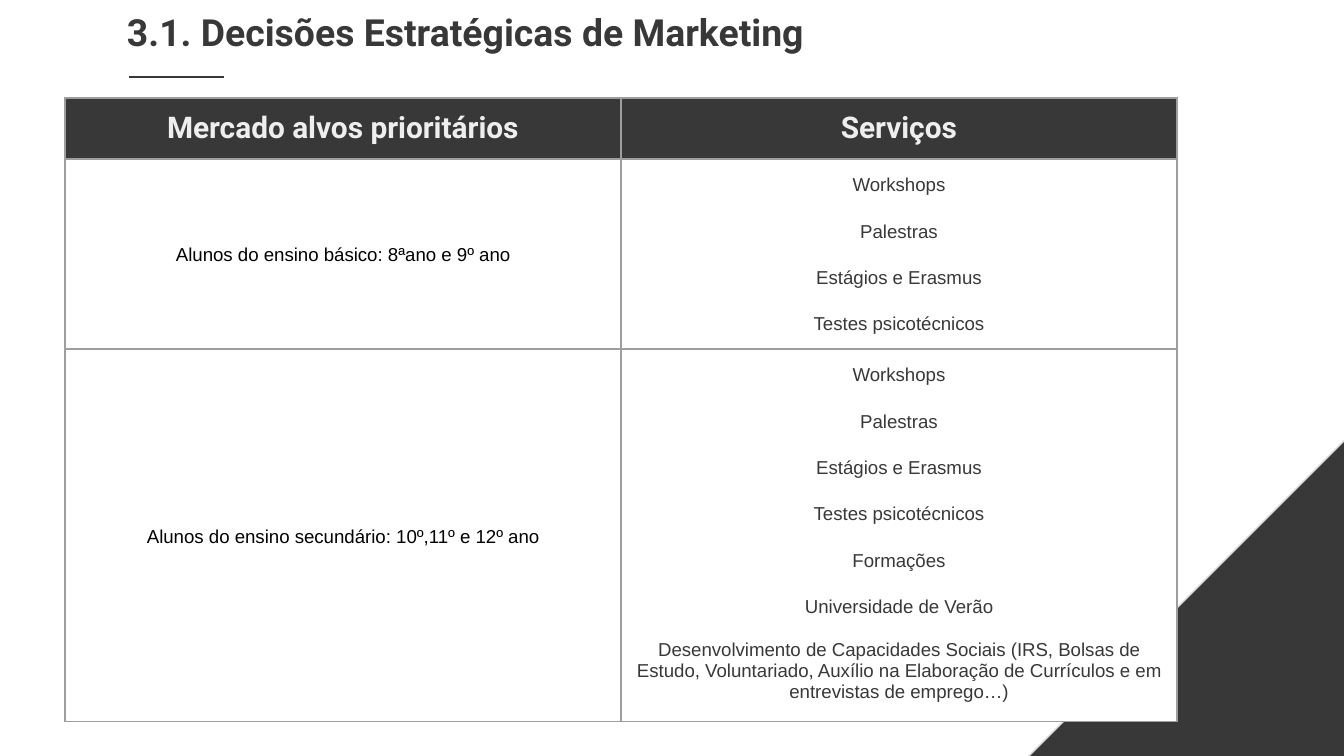
import pptx
import pptx.util
import pptx.dml.color
import pptx.enum.shapes
import pptx.enum.text
import pptx.oxml
import pptx.oxml.ns
from dataclasses import dataclass


@dataclass(frozen=True)
class Theme:
    dark: str = "383838"
    light: str = "EEEEEE"
    white: str = "FFFFFF"
    black: str = "000000"
    edge: str = "DBDBDB"
    border: str = "9E9E9E"
    heading_font: str = "Roboto"
    body_font: str = "Arial"
    title_size: int = 20
    header_size: int = 16
    body_size: int = 10
    spacing: int = 12
    leading: float = 1.15
    hairline: float = 0.75


THEME = Theme()
SCALE = 914400 / 134.4

TITLE = "3.1. Decisões Estratégicas de Marketing"
HEADERS = ["Mercado alvos prioritários", "Serviços"]
COMMON_SERVICES = ["Workshops", "Palestras", "Estágios e Erasmus", "Testes psicotécnicos"]
LONG_SERVICE = (
    "Desenvolvimento de Capacidades Sociais (IRS, Bolsas de Estudo, Voluntariado, "
    "Auxílio na Elaboração de Currículos e em entrevistas de emprego…)"
)
MARKETS = [
    ("Alunos do ensino básico: 8ªano e 9º ano", COMMON_SERVICES),
    (
        "Alunos do ensino secundário: 10º,11º e 12º ano",
        COMMON_SERVICES + ["Formações", "Universidade de Verão", LONG_SERVICE],
    ),
]
COLUMN_WIDTH = 556
ROW_HEIGHTS = [61, 190, 373]


def px(value):
    return pptx.util.Emu(round(value * SCALE))


def box(*values):
    return [px(value) for value in values]


def rgb(colour):
    return pptx.dml.color.RGBColor.from_string(colour)


def set_font(paragraph, name, size, colour, bold=False):
    font = paragraph.font
    font.name, font.size, font.bold = name, pptx.util.Pt(size), bold
    font.color.rgb = rgb(colour)


def set_spacing(paragraph, leading, before=0, after=0):
    paragraph.line_spacing = leading
    paragraph.space_before = pptx.util.Pt(before)
    paragraph.space_after = pptx.util.Pt(after)


def set_insets(target):
    target.margin_left = target.margin_right = px(13)
    target.margin_top = target.margin_bottom = px(13)


def add_borders(cell):
    properties = cell._tc.get_or_add_tcPr()
    width = pptx.util.Pt(THEME.hairline)
    for position, side in enumerate("LRTB"):
        properties.insert(position, pptx.oxml.parse_xml(
            f'<a:ln{side} {pptx.oxml.ns.nsdecls("a")} w="{width}"><a:solidFill>'
            f'<a:srgbClr val="{THEME.border}"/></a:solidFill></a:ln{side}>'
        ))


def fill_cell(cell, lines, fill, font, anchor, spaced):
    cell.fill.solid()
    cell.fill.fore_color.rgb = rgb(fill)
    add_borders(cell)
    set_insets(cell)
    cell.vertical_anchor = anchor
    frame = cell.text_frame
    frame.text = "\n".join(lines)
    for line, paragraph in zip(lines, frame.paragraphs):
        paragraph.alignment = pptx.enum.text.PP_ALIGN.CENTER
        set_font(paragraph, *font)
        if spaced:
            leading = 1.0 if line == LONG_SERVICE else THEME.leading
            set_spacing(paragraph, leading, THEME.spacing)


def add_corner(slide):
    triangle = slide.shapes.add_shape(
        pptx.enum.shapes.MSO_SHAPE.RIGHT_TRIANGLE, *box(853, 226, 706, 706))
    triangle._element.spPr.xfrm.set("flipH", "1")
    triangle.shadow.inherit = False
    triangle.fill.solid()
    triangle.fill.fore_color.rgb = rgb(THEME.dark)
    triangle.line.color.rgb = rgb(THEME.edge)
    triangle.line.width = pptx.util.Pt(THEME.hairline)
    slide.shapes._spTree.insert(2, triangle._element)


def add_title(slide):
    title = slide.shapes.title
    title.left, title.top, title.width, title.height = box(114, -11, 1191, 78)
    frame = title.text_frame
    frame.text = TITLE
    frame.word_wrap = True
    frame.auto_size = pptx.enum.text.MSO_AUTO_SIZE.NONE
    frame.vertical_anchor = pptx.enum.text.MSO_ANCHOR.TOP
    set_insets(frame)
    paragraph = frame.paragraphs[0]
    paragraph.alignment = pptx.enum.text.PP_ALIGN.LEFT
    set_spacing(paragraph, THEME.leading, THEME.spacing, THEME.spacing)
    set_font(paragraph, THEME.heading_font, THEME.title_size, THEME.dark, True)


def add_underline(slide):
    line = slide.shapes.add_connector(
        pptx.enum.shapes.MSO_CONNECTOR.STRAIGHT, *box(129, 77, 224, 77))
    line.line.color.rgb = rgb(THEME.dark)
    line.line.width = pptx.util.Pt(1.5)
    line._element.spPr.append(
        pptx.oxml.parse_xml(f'<a:effectLst {pptx.oxml.ns.nsdecls("a")}/>'))


def add_market_table(slide):
    columns = len(HEADERS)
    table = slide.shapes.add_table(
        len(ROW_HEIGHTS), columns,
        *box(65, 98, columns * COLUMN_WIDTH, sum(ROW_HEIGHTS))).table
    table.first_row = table.horz_banding = False
    for column in table.columns:
        column.width = px(COLUMN_WIDTH)
    for row, height in zip(table.rows, ROW_HEIGHTS):
        row.height = px(height)

    top, middle = pptx.enum.text.MSO_ANCHOR.TOP, pptx.enum.text.MSO_ANCHOR.MIDDLE
    header_font = (THEME.heading_font, THEME.header_size, THEME.light, True)
    market_font = (THEME.body_font, THEME.body_size, THEME.black)
    service_font = (THEME.body_font, THEME.body_size, THEME.dark)
    for index, header in enumerate(HEADERS):
        fill_cell(table.cell(0, index), [header], THEME.dark, header_font, top, False)
    for index, (market, services) in enumerate(MARKETS, start=1):
        fill_cell(table.cell(index, 0), [market], THEME.white, market_font, middle, True)
        fill_cell(table.cell(index, 1), services, THEME.white, service_font, top, True)


def main():
    presentation = pptx.Presentation()
    presentation.slide_width, presentation.slide_height = box(1344, 756)
    slide = presentation.slides.add_slide(presentation.slide_layouts[5])
    add_corner(slide)
    add_title(slide)
    add_underline(slide)
    add_market_table(slide)
    presentation.save("out.pptx")


if __name__ == "__main__":
    main()
